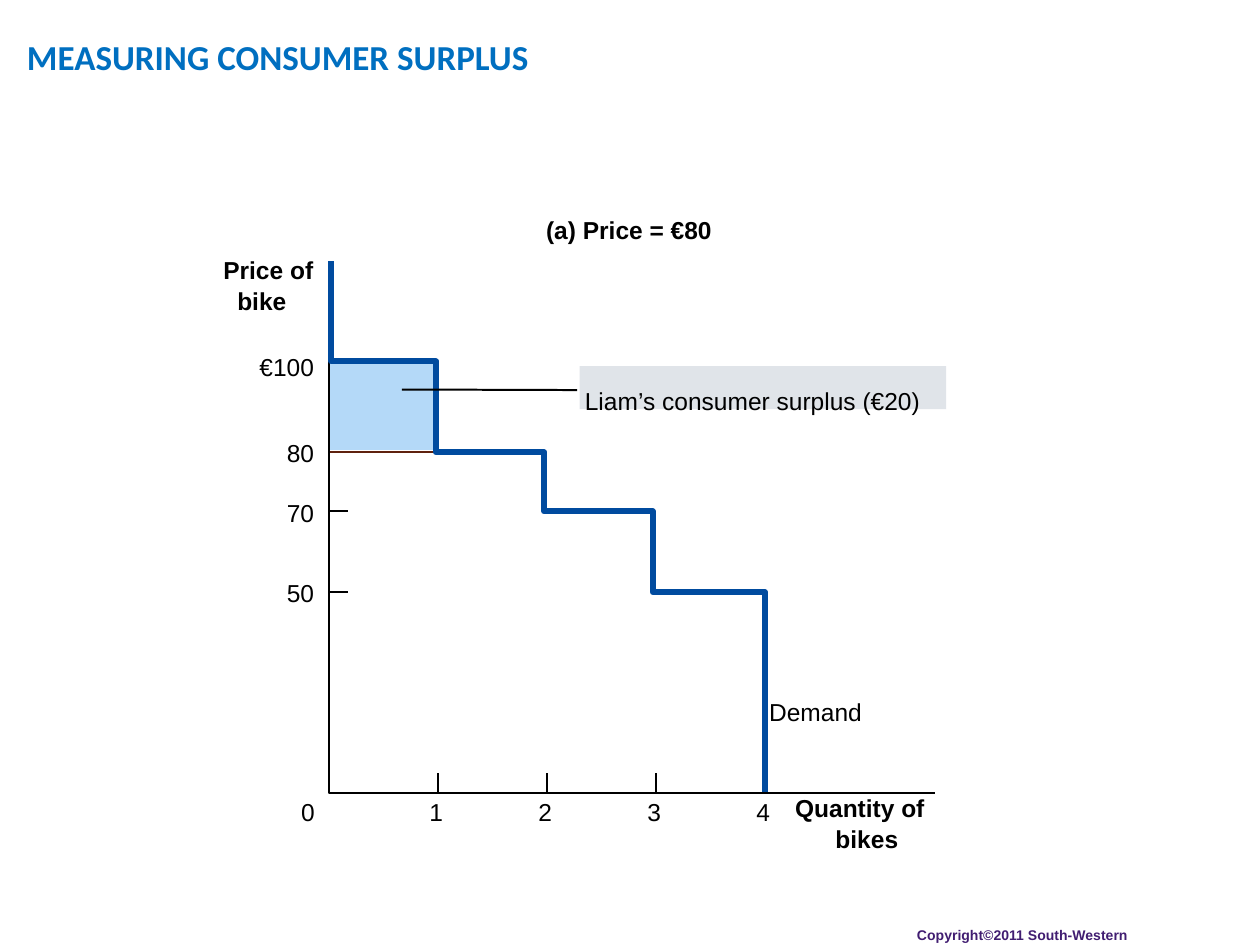
from dataclasses import dataclass

from lxml import etree
from pptx import Presentation
from pptx import util as u
from pptx.dml.color import RGBColor
from pptx.enum import shapes, text as t

Pt = u.Pt


@dataclass(frozen=True)
class Theme:
    title: RGBColor = RGBColor.from_string("006FC0")
    ink: RGBColor = RGBColor.from_string("000000")
    demand: RGBColor = RGBColor.from_string("004B9F")
    surplus: RGBColor = RGBColor.from_string("B4D9F8")
    price_line: RGBColor = RGBColor.from_string("5F210E")
    callout: RGBColor = RGBColor.from_string("E0E4E9")
    copyright: RGBColor = RGBColor.from_string("411D71")
    title_size: int = 20
    label_size: int = 14
    copyright_size: int = 8
    thin: float = 1.12
    thick: float = 3.37
    title_font: str = "Calibri"
    label_font: str = "Arial"


theme = Theme()


def write_text(shape, text, font=theme.label_font, size=theme.label_size,
               color=theme.ink, bold=False, align=t.PP_ALIGN.LEFT, wrap=False,
               inset=(0, 0), indents=((0, 0),), line_spacing=None, gap=0):
    """Fill a shape with text, one paragraph a line; indents are (left, first line)."""
    frame = shape.text_frame
    frame.text = text
    frame.word_wrap = wrap
    frame.auto_size = t.MSO_AUTO_SIZE.NONE
    frame.vertical_anchor = t.MSO_ANCHOR.TOP
    frame.margin_left, frame.margin_top = Pt(inset[0]), Pt(inset[1])
    frame.margin_right = frame.margin_bottom = 0
    for number, (paragraph, (left, first)) in enumerate(zip(frame.paragraphs, indents)):
        properties = paragraph._p.get_or_add_pPr()
        properties.set("marL", str(Pt(left)))
        properties.set("indent", str(Pt(first)))
        paragraph.alignment = align
        paragraph.line_spacing = line_spacing
        paragraph.space_before = Pt(gap if number else 0)
        for run in paragraph.runs:
            run.font.name, run.font.size, run.font.bold = font, Pt(size), bold
            run.font.color.rgb = color


def draw_path(points, color=theme.ink, width=theme.thin):
    """Draw a straight connector for two points, an open outline for more."""
    points = [(Pt(x), Pt(y)) for x, y in points]
    if len(points) == 2:
        line = slide.shapes.add_connector(shapes.MSO_CONNECTOR.STRAIGHT, *points[0], *points[1])
        etree.SubElement(line._element.spPr,
                         "{http://schemas.openxmlformats.org/drawingml/2006/main}effectLst")
    else:
        builder = slide.shapes.build_freeform(*points[0], scale=1.0)
        builder.add_line_segments(points[1:], close=False)
        line = builder.convert_to_shape()
        line.fill.background()
        line.shadow.inherit = False
    line.line.color.rgb = color
    line.line.width = Pt(width)


presentation = Presentation()
presentation.slide_width, presentation.slide_height = Pt(720), Pt(540)
slide = presentation.slides.add_slide(presentation.slide_layouts[5])

# Title
title = slide.shapes.title
title.left, title.top, title.width, title.height = Pt(14.4), Pt(8.6), Pt(317.5), Pt(51)
write_text(title, "MEASURING CONSUMER SURPLUS", font=theme.title_font,
           size=theme.title_size, color=theme.title, bold=True, inset=(1, 11.5))

# Plot geometry
origin_x, origin_y = 187.9, 452.9
axis_top, axis_right = 149.8, 534.2
tick = 10.9
unit = 62.3
price_levels = {"€100": 206.6, "80": 258.5, "70": 292.3, "50": 338.4}
levels = list(price_levels.values())
steps = [249.1, 311, 373, 437]

# Filled blocks: surplus area and callout
blocks = []
for color, left, top, width, height in [
    (theme.surplus, origin_x, 208.1, 61.9, 49),
    (theme.callout, 331.2, 209.3, 209.5, 24.5),
]:
    block = slide.shapes.add_shape(shapes.MSO_SHAPE.RECTANGLE,
                                   Pt(left), Pt(top), Pt(width), Pt(height))
    block.fill.solid()
    block.fill.fore_color.rgb = color
    block.line.fill.background()
    block.shadow.inherit = False
    blocks.append(block)
write_text(blocks[1], "Liam’s consumer surplus (€20)", inset=(3, 11.5))

# Ticks, price line and axes
for y in levels:
    draw_path([(origin_x, y), (origin_x + tick, y)])
for quantity in range(1, 5):
    x = origin_x + quantity * unit
    draw_path([(x, origin_y - tick), (x, origin_y)])
draw_path([(origin_x, levels[1]), (steps[0], levels[1])], color=theme.price_line)
draw_path([(origin_x, axis_top), (origin_x, origin_y), (axis_right, origin_y)])

# Stepped demand curve
demand = [(189.2, axis_top - 0.6), (189.2, levels[0])]
for x, y, next_y in zip(steps, levels, levels[1:] + [origin_y - 0.5]):
    demand += [(x, y), (x, next_y)]
draw_path(demand, color=theme.demand, width=theme.thick)

# Leader to the callout
draw_path([(229.7, 222.6), (329.8, 222.9)])

# Labels: text, left, top, width, height, format
right, center = {"align": t.PP_ALIGN.RIGHT}, {"align": t.PP_ALIGN.CENTER}
labels = [
    ("(a) Price = €80", 312, 122.6, 96, 18, {"bold": True}),
    ("Price of bike", 126.2, 144.5, 55, 36,
     {"bold": True, "wrap": True, "indents": ((9.4, -8),), "line_spacing": 1.07}),
    ("Demand", 439.5, 398.5, 55, 18, {}),
    ("0", 171, 455.7, 10, 18, center),
    ("Quantity of\nbikes", 453.6, 453.6, 76, 36,
     {"bold": True, "indents": ((0.7, 0), (23.8, 0)), "line_spacing": Pt(16.5), "gap": 1.2}),
    ("Copyright©2011 South-Western", 524, 529.3, 125, 10.5,
     {"bold": True, "size": theme.copyright_size, "color": theme.copyright}),
]
for price, y in price_levels.items():
    rise = 5.6 if price == "€100" else 8
    labels.append((price, 139.5, y - rise, 40, 18, right))
for quantity in range(1, 5):
    labels.append((str(quantity), origin_x + quantity * unit - 6, 455.7, 10, 18, center))

for text, left, top, width, height, style in labels:
    box = slide.shapes.add_textbox(Pt(left), Pt(top), Pt(width), Pt(height))
    write_text(box, text, **style)

presentation.save("out.pptx")
